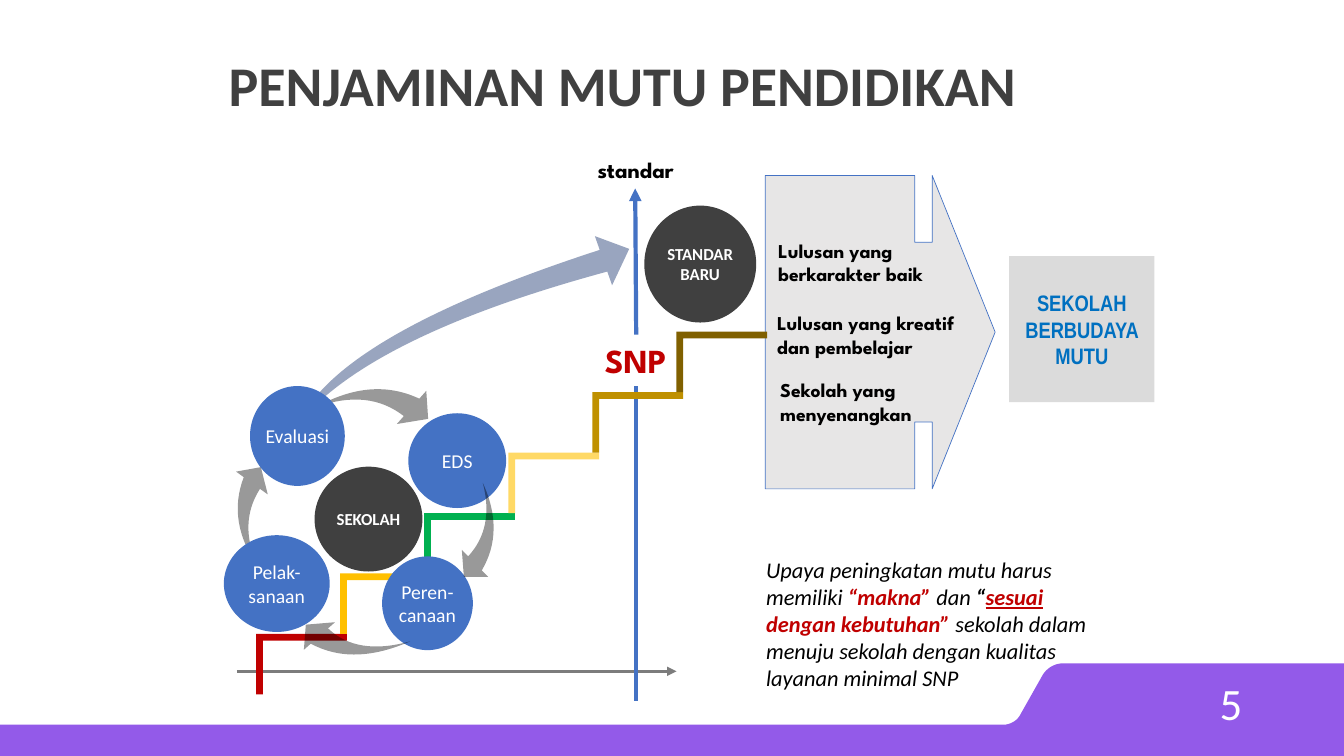
from lxml.etree import SubElement
from pptx import Presentation
from pptx.dml.color import RGBColor
from pptx.enum.shapes import MSO_CONNECTOR, MSO_SHAPE as Kind
from pptx.enum.text import MSO_ANCHOR as Anchor, PP_ALIGN as Align
from pptx.oxml.ns import qn
from pptx.util import Inches, Pt

LEAGUE = "League Spartan"
BLUE, RED, DARK = "4472C4", "C00000", "404040"
BLACK, WHITE = "000000", "FFFFFF"
hue = RGBColor.from_string

deck = Presentation()
deck.slide_width, deck.slide_height = Inches(13.33), Inches(7.5)
slide = deck.slides.add_slide(deck.slide_layouts[6])
shapes = slide.shapes


def draw(kind, box, color, adjust=(), turn=0, alpha=None):
    """Add a filled preset shape; alpha is its opacity in percent."""
    shape = shapes.add_shape(kind, *map(Inches, box))
    shape.shadow.inherit = False
    shape.fill.solid()
    shape.fill.fore_color.rgb = hue(color)
    shape.line.fill.background()
    shape.rotation = turn
    for i, part in enumerate(adjust):
        shape.adjustments[i] = part
    if alpha:
        tone = shape.fill._xPr.find(".//" + qn("a:srgbClr"))
        SubElement(tone, qn("a:alpha")).set("val", str(alpha * 1000))
    return shape


def write(shape, runs, size, face="Calibri", align=Align.LEFT, anchor=Anchor.TOP):
    """Fill a shape with runs of (text, colour, style letters b, i, u)."""
    frame = shape.text_frame
    frame.word_wrap = True
    frame.vertical_anchor = anchor
    para = frame.paragraphs[0]
    para.alignment = align
    for text, color, style in runs:
        run = para.add_run()
        run.text = text
        font = run.font
        font.name, font.size = face, Pt(size)
        font.color.rgb = hue(color)
        font.bold, font.italic = "b" in style, "i" in style
        font.underline = "u" in style
    return para


# Footer band with a raised tab
curves = [
    [(10.55, 6.58), (10.46, 6.58), (10.38, 6.63), (10.34, 6.7)],
    [(10.12, 7.09), (10.09, 7.15), (10.02, 7.19), (9.95, 7.19)],
]
points = []
for curve in curves:
    for n in range(13):
        t = n / 12
        weights = (1 - t) ** 3, 3 * t * (1 - t) ** 2, 3 * t * t * (1 - t), t ** 3
        points.append([sum(w * p[axis] for w, p in zip(weights, curve))
                       for axis in (0, 1)])
points += [(0, 7.19), (0, 7.5), (13.33, 7.5), (13.33, 6.58)]
# The pen keeps whole units only, so the outline is given in EMU
points = [(Inches(x), Inches(y)) for x, y in points]
pen = shapes.build_freeform(*points[0])
pen.add_line_segments(points[1:], close=True)
band = pen.convert_to_shape()
band.shadow.inherit = False
band.fill.solid()
band.fill.fore_color.rgb = hue("935AE9")
band.line.fill.background()

title = shapes.add_textbox(*map(Inches, (2.17, 0.25, 9, 1.25)))
para = write(title, [("PENJAMINAN MUTU PENDIDIKAN", DARK, "b")], 40,
             anchor=Anchor.MIDDLE)
para.line_spacing = 0.9

# Outcome arrow and the rise towards the new standard
callout = draw(Kind.RIGHT_ARROW_CALLOUT, (7.59, 1.74, 2.28, 3.11), "E7E6E6",
               (0.782, 0.862, 0.274, 0.65))
callout.line.color.rgb = hue(BLUE)
callout.line.width = Pt(0.5)
draw(Kind.SWOOSH_ARROW, (2.79, 2.66, 3.58, 1.15), "002060", (0.197, 0.25), 347.1, 40)

# Axes
axes = [
    ((2.35, 6.66, 6.71, 6.66), "7C7C7C", 2.25, True),
    ((6.31, 6.95, 6.31, 3.83), BLUE, 3, False),
    ((6.31, 3.32, 6.3, 1.87), BLUE, 3, True),
]
for ends, color, width, head in axes:
    line = shapes.add_connector(MSO_CONNECTOR.STRAIGHT, *map(Inches, ends))
    line.line.color.rgb = hue(color)
    line.line.width = Pt(width)
    if head:
        SubElement(line.line._get_or_add_ln(), qn("a:tailEnd")).set("type", "triangle")
    SubElement(line._element.spPr, qn("a:effectLst"))

# Staircase
stairs = [RED, "FFC000", "00B050", "FFD966", "BF9000", "806000"]
for i, color in enumerate(stairs):
    step = draw(Kind.CORNER, (2.54 + 0.834 * i, 6.29 - 0.6 * i, 0.9, 0.6), color,
                (0.111, 0.111))
    step._element.spPr.xfrm.set("flipV", "1")

labels = [
    ((5.76, 3.32, 1.09, 0.5), "SNP", RED, 24, Align.CENTER),
    ((5.74, 1.5, 1.13, 0.37), "standar", BLACK, 16, Align.CENTER),
    ((7.62, 2.32, 1.91, 0.57), "Lulusan yang berkarakter baik", BLACK, 14, Align.LEFT),
    ((7.61, 3.04, 2.26, 0.57), "Lulusan yang kreatif dan pembelajar", BLACK, 14,
     Align.LEFT),
    ((7.64, 3.7, 1.9, 0.57), "Sekolah yang menyenangkan", BLACK, 14, Align.LEFT),
]
for box, text, color, size, align in labels:
    write(shapes.add_textbox(*map(Inches, box)), [(text, color, "b")], size, LEAGUE,
          align)

# Quality cycle: two arrows lie behind the circles, two in front
swoops = [
    ((2.14, 4.68, 0.75, 0.79), 312.2),
    ((3.34, 3.58, 0.83, 0.92), 48),
    ((4.38, 4.93, 0.72, 0.77), 142.2),
    ((3.12, 5.87, 0.73, 0.91), 234.9),
]
circles = [
    ((6.39, 2.04, 1.11, 1.16), "STANDAR BARU", DARK, 12, "b"),
    ((3.12, 4.63, 1.07, 1.04), "SEKOLAH", DARK, 12, "b"),
    ((4.05, 4.1, 0.97, 0.94), "EDS", BLUE, 14, ""),
    ((2.48, 3.83, 0.94, 0.99), "Evaluasi", BLUE, 14, ""),
    ((3.79, 5.52, 0.9, 0.93), "Peren-canaan", BLUE, 14, ""),
    ((2.22, 5.31, 1.05, 0.96), "Pelak-sanaan", BLUE, 14, ""),
]
for layer in (swoops[:2], circles, swoops[2:]):
    for box, *rest in layer:
        if layer is not circles:
            draw(Kind.SWOOSH_ARROW, box, BLACK, (0.25, 0.25), rest[0], 40)
            continue
        text, color, size, style = rest
        disc = draw(Kind.OVAL, box, color)
        disc.text_frame.margin_left = disc.text_frame.margin_right = 0
        write(disc, [(text, WHITE, style)], size, align=Align.CENTER,
              anchor=Anchor.MIDDLE)

goal = draw(Kind.RECTANGLE, (10.01, 2.54, 1.44, 1.45), "DBDBDB")
write(goal, [("SEKOLAH BERBUDAYA MUTU", "0070C0", "b")], 16, "Arial Narrow",
      Align.CENTER, Anchor.MIDDLE)

note = shapes.add_textbox(*map(Inches, (7.5, 5.47, 3.68, 1.75)))
write(note, [
    ("Upaya peningkatan mutu harus memiliki ", BLACK, "i"),
    ("“makna” ", RED, "bi"),
    ("dan ", BLACK, "i"),
    ("“", BLACK, "bi"),
    ("sesuai", RED, "biu"),
    (" dengan kebutuhan” ", RED, "bi"),
    ("sekolah dalam menuju sekolah dengan kualitas layanan minimal SNP", BLACK, "i"),
], 16)

number = shapes.add_textbox(*map(Inches, (9.42, 6.77, 3, 0.4)))
write(number, [("5", WHITE, "")], 32, align=Align.RIGHT, anchor=Anchor.MIDDLE)

deck.save("out.pptx")
